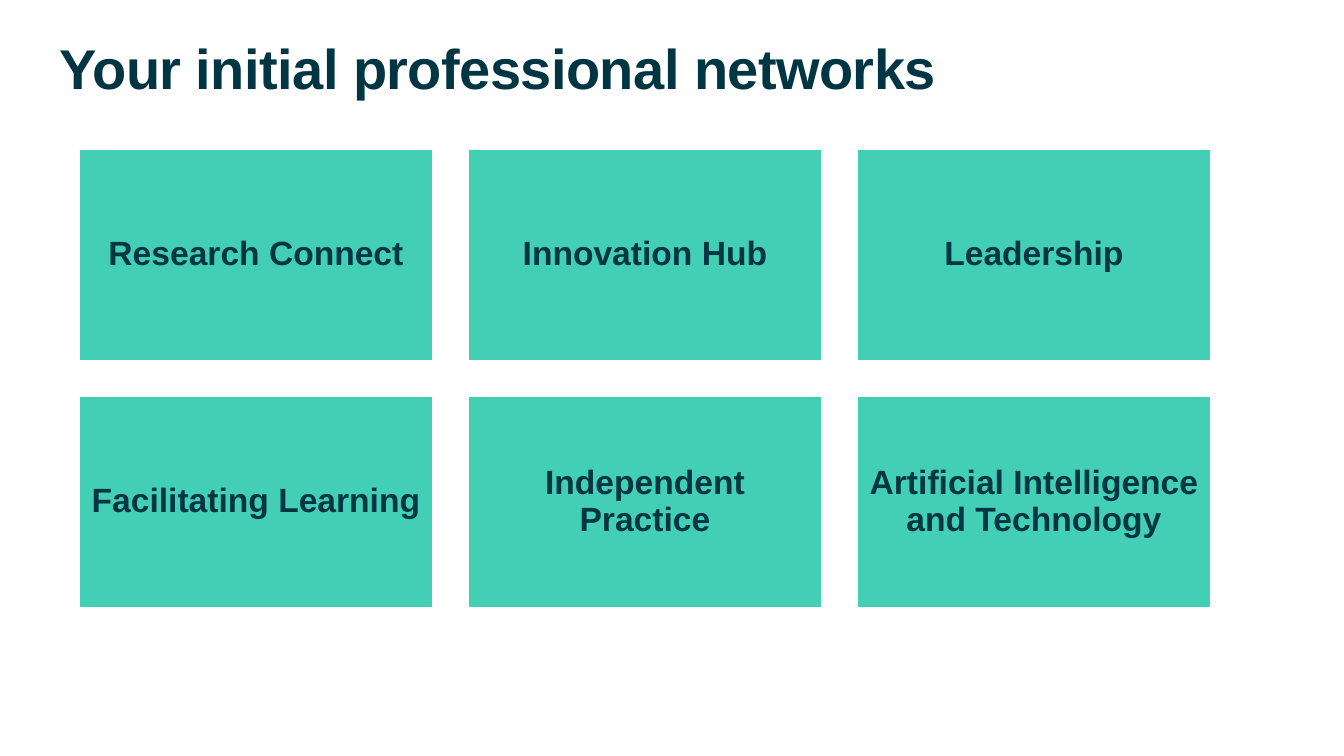
from pptx import Presentation
from pptx.dml.color import RGBColor
from pptx.enum.shapes import MSO_SHAPE as Shape
from pptx.enum.text import MSO_ANCHOR as Anchor, PP_ALIGN as Align
from pptx.util import Pt

# Content
TITLE = "Your initial professional networks"
NETWORKS = [
    ["Research Connect", "Innovation Hub", "Leadership"],
    ["Facilitating Learning", "Independent Practice",
     "Artificial Intelligence and Technology"],
]

# Style and layout, in px
COLOURS = {"ink": "003643", "tile": "43CFB5", "edge": "FFFFFF"}
FONT = "Arial"
EMU_PER_PX = 914400 / 100.8
SLIDE_WIDTH, SLIDE_HEIGHT = 1344, 756
TITLE_BOX = (60, 41, 1230, 80)
GRID_LEFT, GRID_TOP = 79, 149
TILE_WIDTH, TILE_HEIGHT, GAP = 354, 212, 35


def px(length):
    return round(length * EMU_PER_PX)


def colour(name):
    return RGBColor.from_string(COLOURS[name])


def write(box, text, size, align=Align.LEFT, anchor=Anchor.TOP, inset=0, tracking=0):
    frame = box.text_frame
    frame.word_wrap = True
    frame.vertical_anchor = anchor
    frame.margin_left = frame.margin_right = px(inset)
    frame.margin_top = frame.margin_bottom = px(inset)
    para = frame.paragraphs[0]
    para.alignment = align
    para.line_spacing = 0.9
    span = para.add_run()
    span.text = text
    span.font.name = FONT
    span.font.size = Pt(size)
    span.font.bold = True
    span.font.color.rgb = colour("ink")
    if tracking:
        span.font._element.set("spc", str(round(tracking * 100)))


deck = Presentation()
deck.slide_width, deck.slide_height = px(SLIDE_WIDTH), px(SLIDE_HEIGHT)
page = deck.slides.add_slide(deck.slide_layouts[6])

# Title
title = page.shapes.add_textbox(*map(px, TITLE_BOX))
write(title, TITLE, 40, tracking=-0.4)

# Grid of network tiles
for row, names in enumerate(NETWORKS):
    for column, name in enumerate(names):
        left = GRID_LEFT + column * (TILE_WIDTH + GAP)
        top = GRID_TOP + row * (TILE_HEIGHT + GAP)
        tile = page.shapes.add_shape(
            Shape.RECTANGLE, px(left), px(top), px(TILE_WIDTH), px(TILE_HEIGHT))
        tile.shadow.inherit = False
        tile.fill.solid()
        tile.fill.fore_color.rgb = colour("tile")
        tile.line.color.rgb = colour("edge")
        tile.line.width = Pt(1)
        write(tile, name, 24, align=Align.CENTER, anchor=Anchor.MIDDLE, inset=10)

deck.save("out.pptx")
